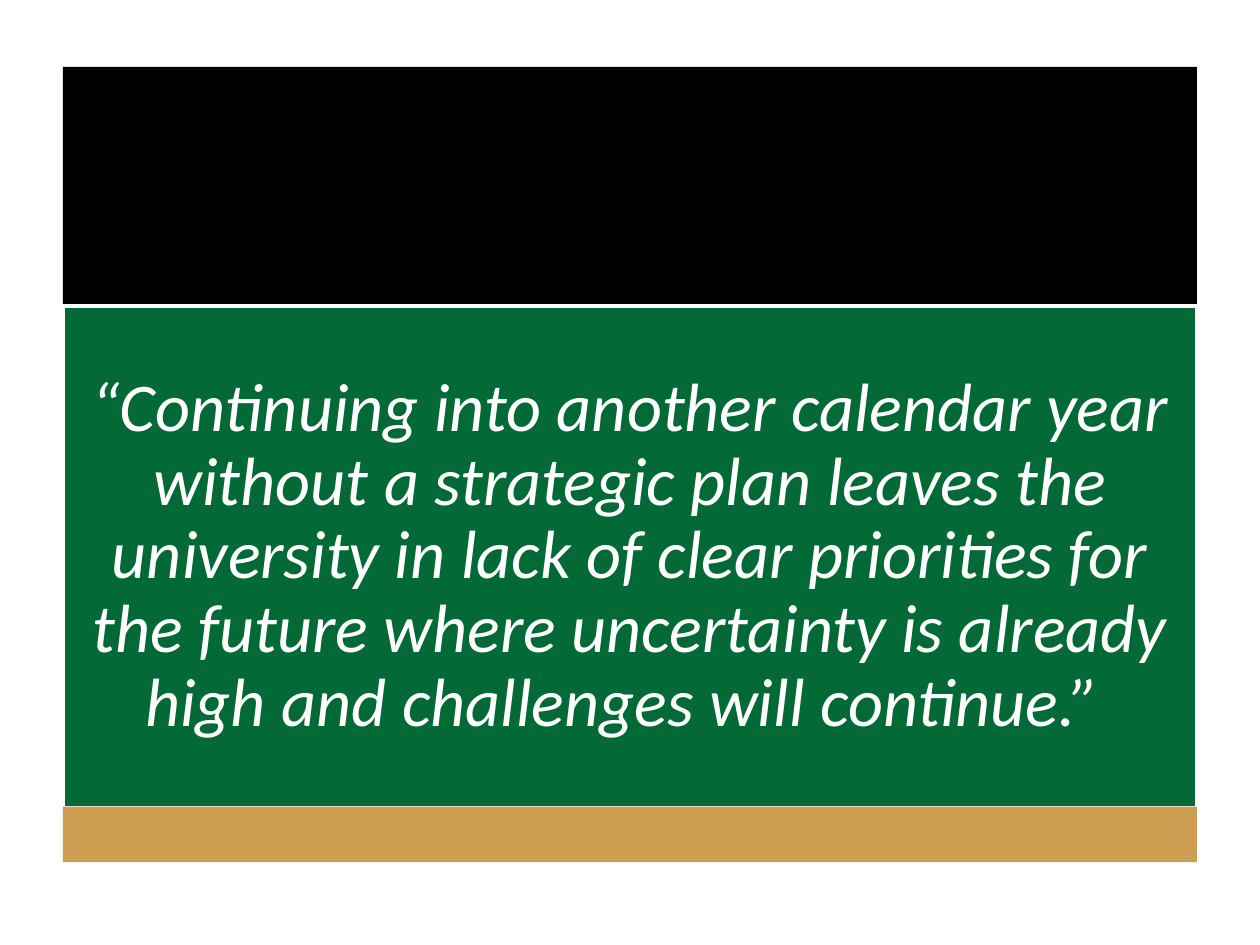
from pptx import Presentation
from pptx.dml.color import RGBColor
from pptx.enum.shapes import MSO_SHAPE
from pptx.enum.text import MSO_ANCHOR, PP_ALIGN
from pptx.util import Cm, Pt


def color(hex_value):
    return RGBColor.from_string(hex_value)


presentation = Presentation()
presentation.slide_width = Cm(25.4)
presentation.slide_height = Cm(19.05)
slide = presentation.slides.add_slide(presentation.slide_layouts[6])

# Three stacked bands: top, height, fill
bands = []
for top, height, fill in [
    (1.35, 4.8, "000000"),
    (6.17, 10.11, "026937"),
    (16.26, 1.12, "CD9E52"),
]:
    band = slide.shapes.add_shape(
        MSO_SHAPE.RECTANGLE, Cm(1.27), Cm(top), Cm(22.86), Cm(height)
    )
    band.shadow.inherit = False
    band.fill.solid()
    band.fill.fore_color.rgb = color(fill)
    band.line.fill.background()
    bands.append(band)

# White outline around the quotation
quote_band = bands[1]
quote_band.line.color.rgb = color("FFFFFF")
quote_band.line.width = Pt(2)

# Quotation
quote = quote_band.text_frame
quote.word_wrap = True
quote.vertical_anchor = MSO_ANCHOR.MIDDLE
quote.margin_left = quote.margin_right = Cm(0.41)
quote.margin_top = quote.margin_bottom = Cm(0.41)
quote.text = (
    "“Continuing into another calendar year without a strategic plan leaves "
    "the university in lack of clear priorities for the future where "
    "uncertainty is already high and challenges will continue.” "
)
paragraph = quote.paragraphs[0]
paragraph.alignment = PP_ALIGN.CENTER
paragraph.line_spacing = 0.9
font = paragraph.runs[0].font
font.name = "Calibri"
font.size = Pt(39)
font.italic = True
font.color.rgb = color("FFFFFF")

presentation.save("out.pptx")
